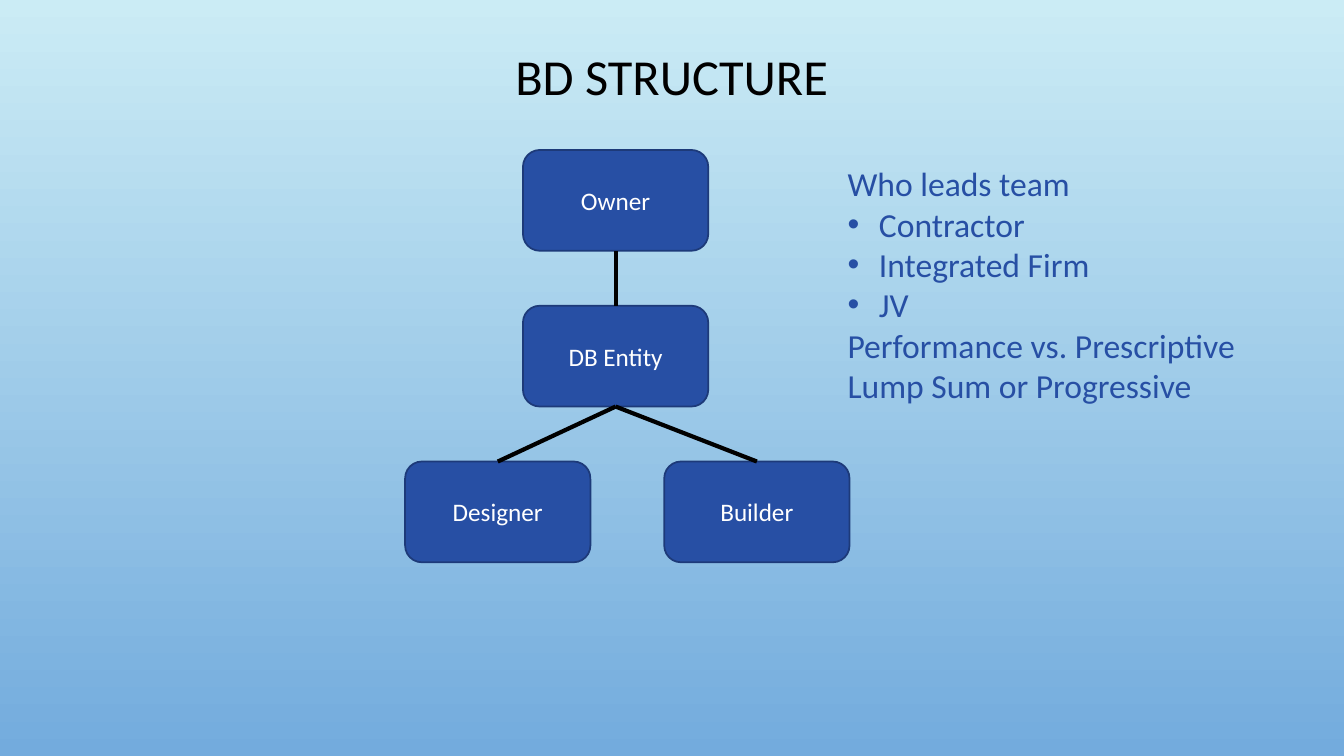
from lxml import etree
from pptx import Presentation
from pptx.dml.color import RGBColor
from pptx.enum import shapes, text
from pptx.oxml.ns import qn
from pptx.util import Cm, Pt

FONT = "Calibri"
BLUE, EDGE, BLACK, WHITE = "274FA4", "1D3A79", "000000", "FFFFFF"


def paint(target, color):
    """Apply a hex colour to a fill or a solid line fill."""
    target.solid()
    target.fore_color.rgb = RGBColor.from_string(color)


def style(para, size, color, align=text.PP_ALIGN.LEFT):
    para.alignment = align
    for run in para.runs:
        run.font.name = FONT
        run.font.size = Pt(size)
        paint(run.font.fill, color)


def backdrop(slide, top, bottom):
    fill = slide.background.fill
    fill.gradient()
    fill.gradient_angle = 270
    for stop, color, place in zip(fill.gradient_stops, (top, bottom), (0, 1)):
        stop.color.rgb = RGBColor.from_string(color)
        stop.position = place


def title(slide, left, top, width, height, words):
    frame = slide.shapes.add_textbox(Cm(left), Cm(top), Cm(width), Cm(height)).text_frame
    frame.word_wrap = True
    frame.vertical_anchor = text.MSO_ANCHOR.MIDDLE
    frame.text = words
    frame.paragraphs[0].line_spacing = 0.9
    style(frame.paragraphs[0], 36, BLACK, text.PP_ALIGN.CENTER)


def node(slide, left, top, width, height, words):
    box = slide.shapes.add_shape(shapes.MSO_SHAPE.ROUNDED_RECTANGLE,
                                 Cm(left), Cm(top), Cm(width), Cm(height))
    box.shadow.inherit = False
    paint(box.fill, BLUE)
    paint(box.line.fill, EDGE)
    box.line.width = Pt(1.25)
    box.text_frame.text = words
    box.text_frame.vertical_anchor = text.MSO_ANCHOR.MIDDLE
    style(box.text_frame.paragraphs[0], 18, WHITE, text.PP_ALIGN.CENTER)
    return box


def link(slide, upper, lower):
    line = slide.shapes.add_connector(shapes.MSO_CONNECTOR.STRAIGHT, 0, 0, 0, 0)
    line.begin_connect(upper, 2)
    line.end_connect(lower, 0)
    paint(line.line.fill, BLACK)
    line.line.width = Pt(3)
    etree.SubElement(line._element.spPr, qn("a:effectLst"))


def chart(slide, left, top, width, height):
    wide, high = 4.67, 2.54
    pitch = (height - high) / 2
    stem = left + 2.97

    # Boxes on three levels
    spots = {
        "Owner": (stem, 0),
        "DB Entity": (stem, 1),
        "Builder": (left + width - wide, 2),
        "Designer": (left, 2),
    }
    nodes = {name: node(slide, x, top + row * pitch, wide, high, name)
             for name, (x, row) in spots.items()}

    # Links between levels
    for upper, lower in (("Owner", "DB Entity"), ("DB Entity", "Builder"),
                         ("DB Entity", "Designer")):
        link(slide, nodes[upper], nodes[lower])


def notes(slide, left, top, width, height, lines):
    frame = slide.shapes.add_textbox(Cm(left), Cm(top), Cm(width), Cm(height)).text_frame
    frame.word_wrap = False
    frame.auto_size = text.MSO_AUTO_SIZE.SHAPE_TO_FIT_TEXT
    frame.text = "\n".join(words for words, _ in lines)
    for para, (_, dot) in zip(frame.paragraphs, lines):
        if dot:
            props = para._p.get_or_add_pPr()
            props.set("marL", str(Cm(0.79)))
            props.set("indent", str(-Cm(0.79)))
            etree.SubElement(props, qn("a:buFont"), typeface="Arial")
            etree.SubElement(props, qn("a:buChar"), char="•")
        style(para, 24, BLUE)


def main():
    deck = Presentation()
    deck.slide_width, deck.slide_height = Cm(33.87), Cm(19.05)
    slide = deck.slides.add_slide(deck.slide_layouts[6])
    backdrop(slide, "CBECF5", "73ABDD")
    title(slide, 2.54, -0.23, 28.78, 4.45, "BD STRUCTURE")
    chart(slide, 10.21, 3.78, 11.2, 10.39)
    notes(slide, 21.11, 3.99, 10.39, 6.4, [
        ("Who leads team", False),
        ("Contractor", True),
        ("Integrated Firm", True),
        ("JV", True),
        ("Performance vs. Prescriptive", False),
        ("Lump Sum or Progressive", False),
    ])
    deck.save("out.pptx")


if __name__ == "__main__":
    main()
